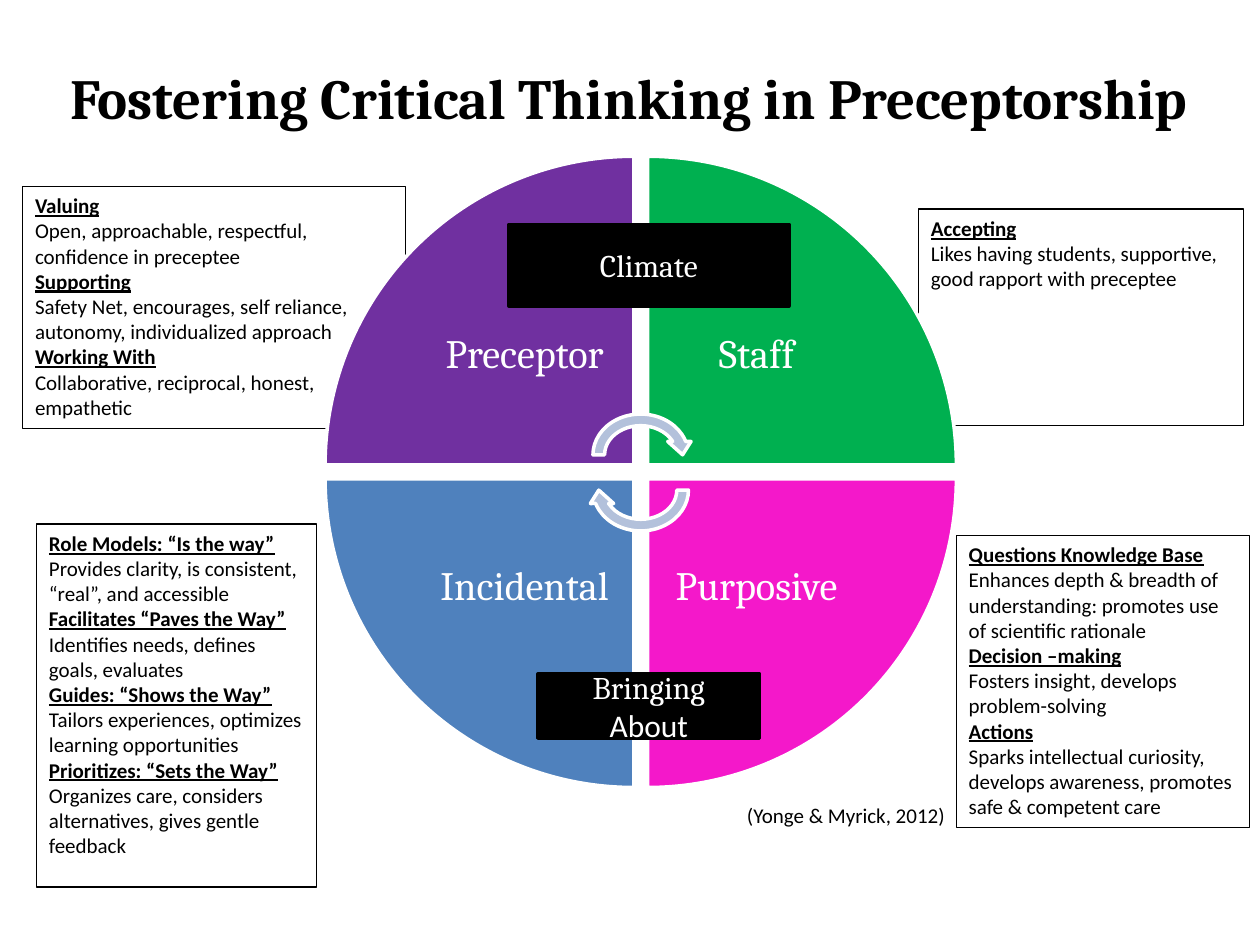
from dataclasses import dataclass
from typing import Any

from pptx import Presentation
from pptx.dml.color import RGBColor
from pptx.enum.shapes import MSO_SHAPE as Shp
from pptx.enum.text import MSO_ANCHOR as Anchor, PP_ALIGN as Align
from pptx.util import Inches, Pt

COLS, ROWS = 100, 75
BLACK, WHITE, ARROW = "000000", "FFFFFF", "B3C1DB"
SERIF, SANS = "Cambria", "Calibri"
WEDGE, LABEL, INSET = 24.5, 17.3, 1.8
WEDGE_X, WEDGE_Y = (25.8, 51.4), (12.4, 38)
HEADING = {"bold": True, "underline": True}


@dataclass(frozen=True)
class Box:
    """A place on the grid, in columns and rows."""
    x: float
    y: float
    w: float
    h: float


@dataclass(frozen=True)
class Note:
    """A bordered box of headings, each with its explanation."""
    box: Box
    entries: tuple[tuple[str, str], ...]


@dataclass(frozen=True)
class Quadrant:
    """A quarter of the circle, by its column and row."""
    name: str
    color: str
    col: int
    row: int
    turn: int


@dataclass(frozen=True)
class Banner:
    """A black bar across two quadrants, with runs of text and font."""
    box: Box
    runs: tuple[tuple[str, str], ...]


NOTES = (
    Note(Box(1.8, 14.8, 30.4, 19.2), (
        ("Valuing", "Open, approachable, respectful, confidence in preceptee"),
        ("Supporting", "Safety Net, encourages, self reliance, autonomy, individualized approach"),
        ("Working With", "Collaborative, reciprocal, honest, empathetic"))),
    Note(Box(75.9, 42.5, 23.3, 23.2), (
        ("Questions Knowledge Base",
         "Enhances depth & breadth of understanding: promotes use of scientific rationale"),
        ("Decision –making", "Fosters insight, develops problem-solving"),
        ("Actions",
         "Sparks intellectual curiosity, develops awareness, promotes safe & competent care"))),
    Note(Box(2.9, 41.6, 22.2, 28.8), (
        ("Role Models: “Is the way”", "Provides clarity, is consistent, “real”, and accessible"),
        ("Facilitates “Paves the Way”", "Identifies needs, defines goals, evaluates"),
        ("Guides: “Shows the Way”", "Tailors experiences, optimizes learning opportunities"),
        ("Prioritizes: “Sets the Way”",
         "Organizes care, considers alternatives, gives gentle feedback"))),
    Note(Box(72.9, 16.6, 25.8, 17.2), (
        ("Accepting", "Likes having students, supportive, good rapport with preceptee"),)),
)
QUADRANTS = (
    Quadrant("Preceptor", "7030A0", 0, 0, 0),
    Quadrant("Staff", "00B050", 1, 0, 90),
    Quadrant("Purposive", "F418CA", 1, 1, 180),
    Quadrant("Incidental", "4F81BD", 0, 1, 270),
)
ARROWS = ((Box(46.6, 32.4, 8.5, 7.4), 0), (Box(46.6, 35.2, 8.5, 7.4), 180))
BANNERS = (
    Banner(Box(40.4, 17.8, 22.2, 6.5), (("Climate", SERIF),)),
    Banner(Box(42.7, 53.5, 17.6, 5.1), (("Bringing", SERIF), (" About", SANS))),
)


def rgb(color: str) -> RGBColor:
    """Turn a hex string into a colour."""
    return RGBColor.from_string(color)


def apply(target: Any, values: dict[str, Any]) -> None:
    """Set each named attribute on the target."""
    for name, value in values.items():
        setattr(target, name, value)


def place(prs: Any, box: Box) -> tuple[int, ...]:
    """Turn grid columns and rows into slide lengths."""
    col, row = prs.slide_width / COLS, prs.slide_height / ROWS
    return tuple(round(v) for v in (box.x * col, box.y * row, box.w * col, box.h * row))


def add_shape(prs: Any, slide: Any, kind: Any, box: Box, fill: str,
              line: str = WHITE, width: float = 2, turn: int = 0) -> Any:
    """Draw a filled, outlined shape and return it."""
    s = slide.shapes.add_shape(kind, *place(prs, box))
    s.shadow.inherit = False
    s.rotation = turn
    s.fill.solid()
    s.fill.fore_color.rgb = rgb(fill)
    s.line.color.rgb = rgb(line)
    s.line.width = Pt(width)
    return s


def add_run(p: Any, text: str, size: float, font: str = SANS,
            color: str = BLACK, **style: Any) -> None:
    """Add a formatted run to a paragraph."""
    r = p.add_run()
    r.text = text
    apply(r.font, {"size": Pt(size), "name": font, **style})
    r.font.color.rgb = rgb(color)


def frame(s: Any, **values: Any) -> Any:
    """Make the shape's text wrap, format its frame and return the frame."""
    tf = s.text_frame
    apply(tf, {"word_wrap": True, "vertical_anchor": Anchor.MIDDLE, **values})
    return tf


def add_label(prs: Any, slide: Any, box: Box, text: str, size: float,
              align: Any = Align.CENTER, font: str = SERIF, color: str = BLACK,
              frame_values: dict[str, Any] | None = None, **style: Any) -> Any:
    """Add a one-line text box and return its paragraph."""
    s = slide.shapes.add_textbox(*place(prs, box))
    p = frame(s, **(frame_values or {})).paragraphs[0]
    p.alignment = align
    add_run(p, text, size, font, color, **style)
    return p


def add_note(prs: Any, slide: Any, note: Note) -> None:
    """Draw a note with underlined headings."""
    s = add_shape(prs, slide, Shp.RECTANGLE, note.box, WHITE, BLACK, 0.75)
    tf = frame(s, vertical_anchor=Anchor.TOP)
    lines = [line for head, body in note.entries for line in ((head, HEADING), (body, {}))]
    for i, (text, style) in enumerate(lines):
        p = tf.add_paragraph() if i else tf.paragraphs[0]
        p.alignment = Align.LEFT
        add_run(p, text, 12, **style)


def add_quadrant(prs: Any, slide: Any, q: Quadrant) -> None:
    """Draw a wedge with its name near the circle's centre."""
    x, y, shift = WEDGE_X[q.col], WEDGE_Y[q.row], WEDGE - LABEL
    add_shape(prs, slide, Shp.PIE_WEDGE, Box(x, y, WEDGE, WEDGE), q.color, turn=q.turn)
    box = Box(x + shift * (1 - q.col), y + shift * (1 - q.row), LABEL, LABEL)
    inset = round(prs.slide_width * INSET / COLS)
    sides = {f"margin_{side}": inset for side in ("left", "top", "right", "bottom")}
    p = add_label(prs, slide, box, q.name, 23, color=WHITE, frame_values=sides)
    p.line_spacing = 0.9


def add_banner(prs: Any, slide: Any, banner: Banner) -> None:
    """Draw a black bar with white centred text."""
    s = add_shape(prs, slide, Shp.RECTANGLE, banner.box, BLACK, BLACK)
    p = frame(s).paragraphs[0]
    p.alignment = Align.CENTER
    for text, font in banner.runs:
        add_run(p, text, 18, font, WHITE)


def main() -> None:
    """Build the slide and save it."""
    prs = Presentation()
    apply(prs, {"slide_width": Inches(10), "slide_height": Inches(7.5)})
    slide = prs.slides.add_slide(prs.slide_layouts[6])
    add_label(prs, slide, Box(2.4, 1.4, 95, 12.5),
              "Fostering Critical Thinking in Preceptorship", 32.4, bold=True)
    for note in NOTES:
        add_note(prs, slide, note)
    for q in QUADRANTS:
        add_quadrant(prs, slide, q)
    for box, turn in ARROWS:
        add_shape(prs, slide, Shp.CIRCULAR_ARROW, box, ARROW, turn=turn)
    for banner in BANNERS:
        add_banner(prs, slide, banner)
    add_label(prs, slide, Box(58.3, 63.2, 19.7, 3), "(Yonge & Myrick, 2012)", 12,
              Align.LEFT, SANS, frame_values={"vertical_anchor": Anchor.TOP})
    prs.save("out.pptx")


if __name__ == "__main__":
    main()
